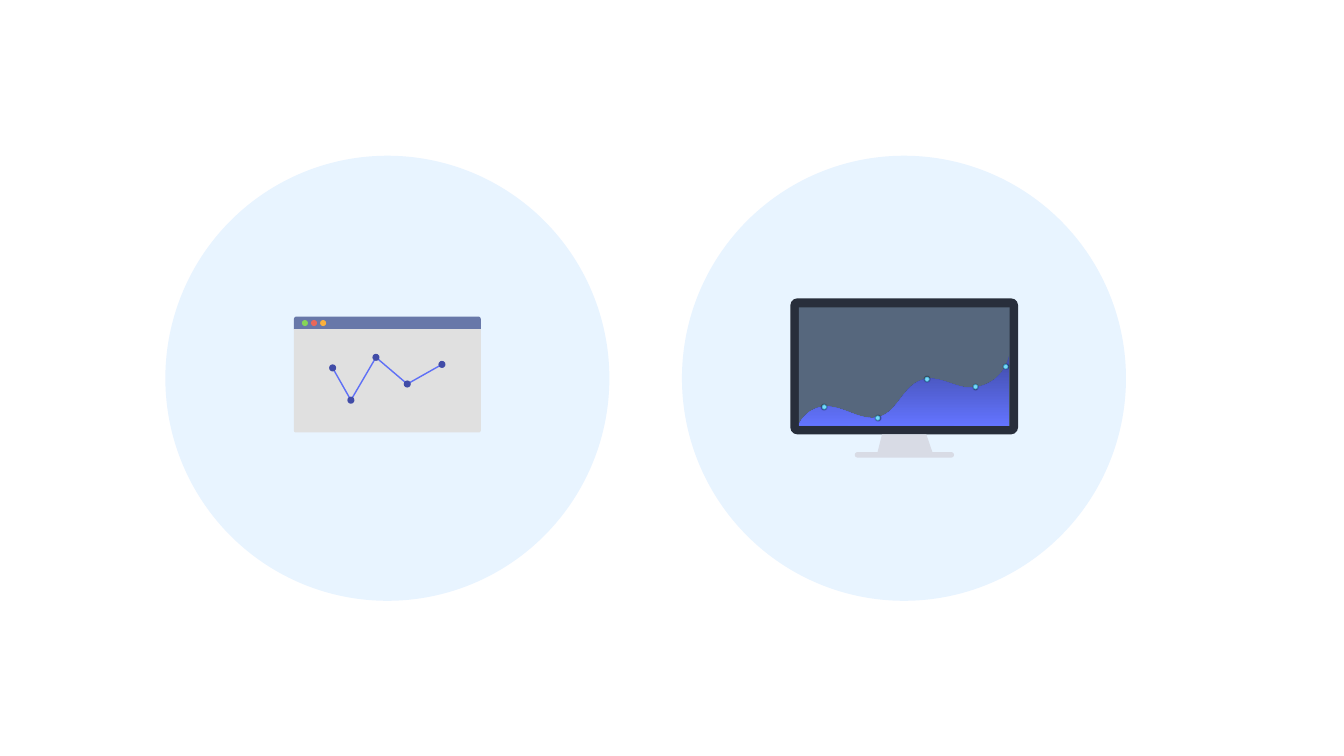
"""Build a slide with two icons: a line graph in a window and an area graph on a monitor."""
from lxml import etree
from pptx import Presentation
from pptx import util as u
from pptx.dml import color as dml
from pptx.enum import shapes as kinds
from pptx.oxml import ns

COLORS = {
    "backdrop": "E8F4FF", "title_bar": "6878A9", "page": "E0E0E0",
    "green": "85D656", "red": "EA6759", "amber": "FBB03B",
    "bezel": "282E3B", "screen": "56677D", "stand": "D8DBE5",
    "area_top": "414CA7", "area_bottom": "6374FF",
    "marker": "79D9F9", "marker_edge": "3898BF",
    "trend": "5F70F6", "trend_dot": "414CA7", "shade": "000000",
}
SLIDE_SIZE = (1920, 1080)
OVAL = kinds.MSO_SHAPE.OVAL
RECTANGLE = kinds.MSO_SHAPE.RECTANGLE
ROUNDED = kinds.MSO_SHAPE.ROUNDED_RECTANGLE
TOP_ROUNDED = kinds.MSO_SHAPE.ROUND_2_SAME_RECTANGLE

BACKDROP_LEFTS = (236.2, 974.2)
BACKDROP_BOX = (222.5, 634.3, 635.8)
WINDOW_PARTS = [
    (TOP_ROUNDED, (419.8, 452.2, 267.1, 18.4), "title_bar", (0.2, 0)),
    (TOP_ROUNDED, (419.8, 470.2, 267.1, 147.6), "page", (0, 0.02)),
]
WINDOW_BUTTONS = ("green", "red", "amber")
BUTTON_START, BUTTON_GAP, BUTTON_SIZE = (435.6, 461.5), 13, 8.6
MONITOR_PARTS = [
    (ROUNDED, (1129, 426.2, 325.4, 194.4), "bezel", (0.052,)),
    (RECTANGLE, (1141.2, 439.2, 301, 169.2), "screen", ()),
    (ROUNDED, (1221.1, 645.8, 141.8, 7.9), "stand", (0.5,)),
]
STAND_NECK = [(1260, 620.6), (1252.1, 652.3), (1334.2, 652.3), (1323.4, 620.6)]
AREA_START = (1141.2, 607.7)
AREA_CURVES = [
    ((1147, 592.6), (1161.4, 582.5), (1177.2, 581)),
    ((1205.3, 578.9), (1230.5, 604.1), (1257.8, 595.4)),
    ((1283.8, 586.1), (1291, 550.8), (1317.6, 542.9)),
    ((1339.2, 535.7), (1359.4, 551.5), (1381.7, 553.7)),
    ((1410.5, 555.8), (1436.4, 536.4), (1441.4, 508.3)),
]
AREA_CORNER = (1441.4, 608.4)
AREA_MARKERS = [(1177.6, 581.4), (1324.4, 541.8), (1436.8, 523.8),
                (1253.9, 597.2), (1393.6, 552.6)]
MARKER_SIZE = 6.5
TREND_POINTS = [(475.2, 525.6), (501.3, 571.7), (537.1, 510.5), (581.8, 548.6), (631.4, 520.6)]
TREND_DOT_SIZE = 10.1
CURVE_STEPS = 24


def rgb(name):
    return dml.RGBColor.from_string(COLORS[name])


def style(shape, fill):
    shape.shadow.inherit = False
    shape.fill.solid()
    shape.fill.fore_color.rgb = rgb(fill)
    shape.line.fill.background()
    return shape


def add_part(parent, kind, box, fill, adjustments=()):
    shape = parent.shapes.add_shape(kind, *map(u.Pt, box))
    for index, value in enumerate(adjustments):
        shape.adjustments[index] = value
    return style(shape, fill)


def add_dot(parent, center, size, fill):
    x, y = center
    return add_part(parent, OVAL, (x - size / 2, y - size / 2, size, size), fill)


def add_outline(parent, points, fill):
    start, *rest = [(u.Pt(x), u.Pt(y)) for x, y in points]
    builder = parent.shapes.build_freeform(*start)
    builder.add_line_segments(rest, close=True)
    return style(builder.convert_to_shape(), fill)


def curve_points(start, curves):
    points = [start]
    for control_1, control_2, end in curves:
        anchors = list(zip(points[-1], control_1, control_2, end))
        for step in range(1, CURVE_STEPS + 1):
            t = step / CURVE_STEPS
            weights = ((1 - t) ** 3, 3 * t * (1 - t) ** 2, 3 * t * t * (1 - t), t ** 3)
            points.append(tuple(sum(w * a for w, a in zip(weights, axis)) for axis in anchors))
    return points


def add_shade(shape):
    effects = shape._element.spPr.find(ns.qn("a:effectLst"))
    shade = etree.SubElement(effects, ns.qn("a:outerShdw"), blurRad=str(u.Pt(1)),
                             dist="0", dir="5400000", rotWithShape="0")
    tint = etree.SubElement(shade, ns.qn("a:srgbClr"), val=COLORS["shade"])
    etree.SubElement(tint, ns.qn("a:alpha"), val="50000")


def draw_window(slide):
    window = slide.shapes.add_group_shape()
    for part in WINDOW_PARTS:
        add_part(window, *part)
    x, y = BUTTON_START
    for index, fill in enumerate(WINDOW_BUTTONS):
        add_dot(window, (x + index * BUTTON_GAP, y), BUTTON_SIZE, fill)


def draw_monitor(slide):
    monitor = slide.shapes.add_group_shape()
    for part in MONITOR_PARTS:
        add_part(monitor, *part)
    add_outline(monitor, STAND_NECK, "stand")
    area = add_outline(monitor, curve_points(AREA_START, AREA_CURVES) + [AREA_CORNER], "area_top")
    area.fill.gradient()
    area.fill.gradient_angle = 270
    for stop, fill in zip(area.fill.gradient_stops, ("area_top", "area_bottom")):
        stop.color.rgb = rgb(fill)
    for center in AREA_MARKERS:
        marker = add_dot(monitor, center, MARKER_SIZE, "marker")
        marker.line.color.rgb = rgb("marker_edge")
        marker.line.width = u.Pt(1)
        add_shade(marker)


def draw_trend(slide):
    trend = slide.shapes.add_group_shape()
    for start, end in zip(TREND_POINTS, TREND_POINTS[1:]):
        segment = trend.shapes.add_connector(kinds.MSO_CONNECTOR.STRAIGHT, *map(u.Pt, start + end))
        segment.line.color.rgb = rgb("trend")
        segment.line.width = u.Pt(2)
        etree.SubElement(segment._element.spPr, ns.qn("a:effectLst"))
    for center in TREND_POINTS:
        add_dot(trend, center, TREND_DOT_SIZE, "trend_dot")


def main():
    deck = Presentation()
    deck.slide_width, deck.slide_height = map(u.Pt, SLIDE_SIZE)
    slide = deck.slides.add_slide(deck.slide_layouts[6])
    for left in BACKDROP_LEFTS:
        add_part(slide, OVAL, (left, *BACKDROP_BOX), "backdrop")
    draw_window(slide)
    draw_monitor(slide)
    draw_trend(slide)
    deck.save("out.pptx")


if __name__ == "__main__":
    main()
